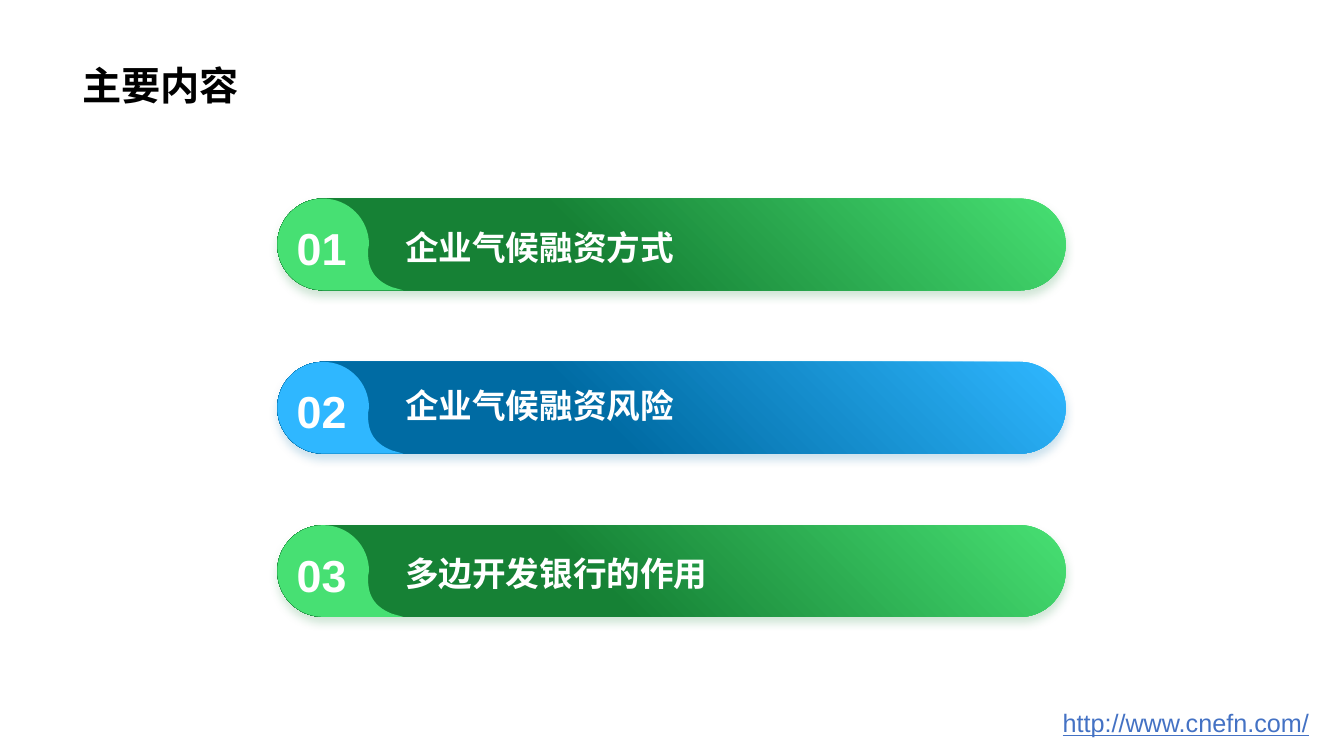
"""Build the contents slide with three numbered gradient bars."""
from math import cos, pi, sin

from lxml import etree
from pptx import Presentation
from pptx.dml.color import RGBColor
from pptx.enum.shapes import MSO_SHAPE as Preset
from pptx.enum.text import MSO_ANCHOR as Anchor, PP_ALIGN as Align
from pptx.oxml.ns import qn
from pptx.util import Inches, Pt

TITLE = "主要内容"
WEBSITE = "http://www.cnefn.com/"
SECTIONS = [
    ("01", "企业气候融资方式", "green", 0.23),
    ("02", "企业气候融资风险", "blue", 0.18),
    ("03", "多边开发银行的作用", "green", 0.23),
]
COLORS = {
    "green": "47E073", "dark green": "168135",
    "blue": "2FB7FF", "dark blue": "006BA3",
    "white": "FFFFFF", "black": "000000", "link": "4472C4",
}
BAR_LEFT, BAR_TOP, BAR_WIDTH, BAR_HEIGHT, BAR_PITCH = 2.75, 1.97, 7.82, 0.91, 1.62
TAIL_CURVE = [(0.9, 0.51), (0.9, 0.63), (0.91, 0.79), (1.14, 0.88)]
TAIL_TIP = (1.25, BAR_HEIGHT)
CURVE_STEPS = 24


def rgb(name):
    return RGBColor.from_string(COLORS[name])


def add_text(slide, box, text, size, color, align=Align.LEFT, anchor=Anchor.TOP,
             bold=True, underline=False):
    frame = slide.shapes.add_textbox(*map(Inches, box)).text_frame
    frame.word_wrap = True
    frame.vertical_anchor = anchor
    paragraph = frame.paragraphs[0]
    paragraph.alignment = align
    run = paragraph.add_run()
    run.text = text
    formats = {"name": "Arial", "size": Pt(size), "bold": bold, "underline": underline}
    for attribute, value in formats.items():
        setattr(run.font, attribute, value)
    run.font.color.rgb = rgb(color)


def add_shadow(shape, color):
    shape.shadow.inherit = False
    effects = shape._element.spPr.find(qn("a:effectLst"))
    shadow = etree.SubElement(effects, qn("a:outerShdw"), blurRad=str(Pt(6)),
                              dist=str(Pt(4)), dir="5400000", algn="t", rotWithShape="0")
    tint = etree.SubElement(shadow, qn("a:srgbClr"), val=COLORS[color])
    etree.SubElement(tint, qn("a:alpha"), val="20000")


def add_bar(slide, top, color):
    bar = slide.shapes.add_shape(Preset.ROUNDED_RECTANGLE, Inches(BAR_LEFT), Inches(top),
                                 Inches(BAR_WIDTH), Inches(BAR_HEIGHT))
    bar.adjustments[0] = 0.5
    bar.fill.gradient()
    bar.fill.gradient_angle = 225
    stops = [(0, color), (0.6, f"dark {color}")]
    for stop, (position, name) in zip(bar.fill.gradient_stops, stops):
        stop.position = position
        stop.color.rgb = rgb(name)
    bar.line.fill.background()
    add_shadow(bar, f"dark {color}")


def badge_outline():
    radius = BAR_HEIGHT / 2
    points = []
    for step in range(2 * CURVE_STEPS + 1):
        angle = pi / 2 + 1.5 * pi * step / (2 * CURVE_STEPS)
        points.append((radius + radius * cos(angle), radius + radius * sin(angle)))
    for step in range(CURVE_STEPS + 1):
        t = step / CURVE_STEPS
        weights = ((1 - t) ** 3, 3 * t * (1 - t) ** 2, 3 * t ** 2 * (1 - t), t ** 3)
        points.append(tuple(sum(weight * point[axis] for weight, point in zip(weights, TAIL_CURVE))
                            for axis in (0, 1)))
    return points + [TAIL_TIP]


def add_badge(slide, top, color):
    points = [(Inches(BAR_LEFT + x), Inches(top + y)) for x, y in badge_outline()]
    builder = slide.shapes.build_freeform(*points[0])
    builder.add_line_segments(points[1:], close=True)
    badge = builder.convert_to_shape()
    badge.fill.solid()
    badge.fill.fore_color.rgb = rgb(color)
    badge.line.fill.background()
    badge.shadow.inherit = False


def main():
    presentation = Presentation()
    presentation.slide_width = Inches(13.33)
    presentation.slide_height = Inches(7.5)
    slide = presentation.slides.add_slide(presentation.slide_layouts[6])

    add_text(slide, (10.44, 6.97, 2.74, 0.4), WEBSITE, 18, "link", bold=False, underline=True)
    add_text(slide, (0.72, 0, 11.88, 1.12), TITLE, 28, "black", anchor=Anchor.BOTTOM)
    for index, (number, label, color, label_offset) in enumerate(SECTIONS):
        top = BAR_TOP + index * BAR_PITCH
        add_bar(slide, top, color)
        add_badge(slide, top, color)
        add_text(slide, (BAR_LEFT + 1.17, top + label_offset, 5.77, 0.5), label, 24, "white")
        add_text(slide, (BAR_LEFT + 0.09, top + 0.17, 0.7, 0.64), number, 32, "white",
                 align=Align.CENTER)
    presentation.save("out.pptx")


if __name__ == "__main__":
    main()
